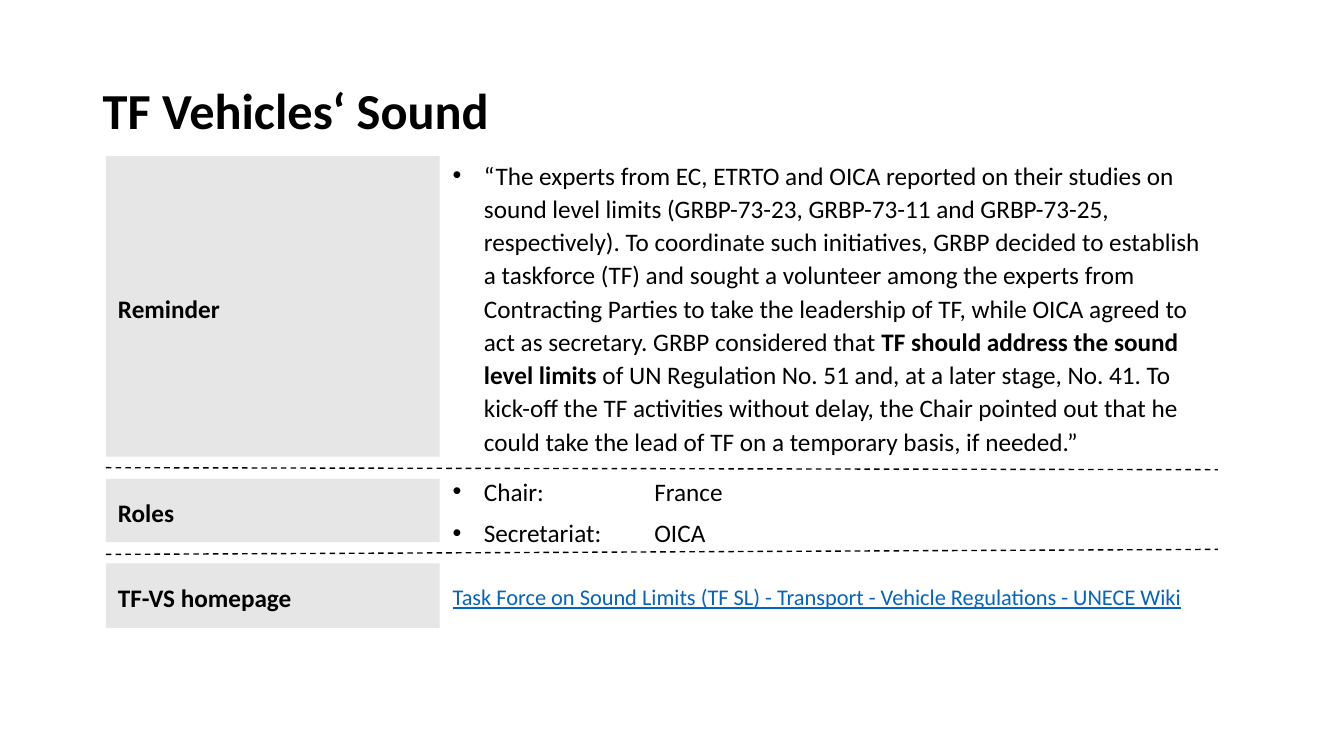
from lxml.etree import SubElement
from pptx import Presentation
from pptx.dml.color import RGBColor
from pptx.enum.dml import MSO_LINE
from pptx.enum.shapes import MSO_CONNECTOR as Connector, MSO_SHAPE as Shape
from pptx.enum.text import MSO_ANCHOR as Anchor
from pptx.oxml.ns import qn
from pptx.util import Inches, Pt

BLACK = RGBColor(0, 0, 0)
GREY = RGBColor(0xE7, 0xE6, 0xE6)
BLUE = RGBColor(0x05, 0x63, 0xC1)

BODY = {"name": "Calibri", "size": Pt(18), "bold": False, "color": BLACK}
STRONG = {**BODY, "bold": True}
TITLE = {**STRONG, "size": Pt(36)}
LINK = {**BODY, "size": Pt(16), "underline": True, "color": BLUE}

HEADING = [[("TF Vehicles‘ Sound", TITLE)]]
REMINDER = [[
    ("“The experts from EC, ETRTO and OICA reported on their studies on sound level limits "
     "(GRBP-73-23, GRBP-73-11 and GRBP-73-25, respectively). To coordinate such initiatives, "
     "GRBP decided to establish a taskforce (TF) and sought a volunteer among the experts from "
     "Contracting Parties to take the leadership of TF, while OICA agreed to act as secretary. "
     "GRBP considered that ", BODY),
    ("TF should address the sound level limits", STRONG),
    (" of UN Regulation No. 51 and, at a later stage, No. 41. To kick-off the TF activities "
     "without delay, the Chair pointed out that he could take the lead of TF on a temporary "
     "basis, if needed.”", BODY),
]]
ROLES = [[("Chair: \tFrance", BODY)], [("Secretariat: \tOICA", BODY)]]
HOMEPAGE = [[("Task Force on Sound Limits (TF SL) - Transport - Vehicle Regulations - UNECE Wiki",
              LINK)]]

ROWS = [
    ("Reminder", 1.55, 2.98, REMINDER, True, 0),
    ("Roles", 4.75, 0.63, ROLES, True, 0.04),
    ("TF-VS homepage", 5.59, 0.64, HOMEPAGE, False, 0),
]
DIVIDERS = [(4.64, 4.66), (5.5, 5.45)]
LABEL_LEFT, LABEL_WIDTH = 1.05, 3.31
TEXT_LEFT, TEXT_WIDTH = 4.49, 7.43
DIVIDER_RIGHT = 12.08
INDENT, TAB_STOP = Inches(0.31), Inches(2)


def add_bullet(para):
    props = para._p.get_or_add_pPr()
    props.set("marL", str(INDENT))
    props.set("indent", str(-INDENT))
    SubElement(props, qn("a:buFont"), typeface="Arial")
    SubElement(props, qn("a:buChar"), char="•")
    tabs = SubElement(props, qn("a:tabLst"))
    SubElement(tabs, qn("a:tab"), pos=str(TAB_STOP), algn="l")


def write(box, paragraphs, margins=(0, 0), bulleted=False, spacing=1.1):
    frame = box.text_frame
    side, edge = (Inches(margin) for margin in margins)
    layout = {"word_wrap": True, "vertical_anchor": Anchor.MIDDLE, "margin_left": side,
              "margin_right": side, "margin_top": edge, "margin_bottom": edge}
    for name, value in layout.items():
        setattr(frame, name, value)
    for index, spans in enumerate(paragraphs):
        para = frame.add_paragraph() if index else frame.paragraphs[0]
        if bulleted:
            add_bullet(para)
        para.line_spacing = spacing
        para.space_before = Pt(6 if index else 0)
        for text, style in spans:
            span = para.add_run()
            span.text = text
            for name, value in style.items():
                if name == "color":
                    span.font.color.rgb = value
                else:
                    setattr(span.font, name, value)


def add_text(page, place, paragraphs, **options):
    box = page.shapes.add_textbox(*map(Inches, place))
    write(box, paragraphs, **options)


def add_label(page, text, top, height):
    place = map(Inches, (LABEL_LEFT, top, LABEL_WIDTH, height))
    box = page.shapes.add_shape(Shape.RECTANGLE, *place)
    box.shadow.inherit = False
    box.fill.solid()
    box.fill.fore_color.rgb = GREY
    box.line.fill.background()
    write(box, [[(text, STRONG)]], margins=(0.12, 0.08))
    box.text_frame.paragraphs[0].alignment = 1


def add_divider(page, start, end):
    ends = map(Inches, (LABEL_LEFT, start, DIVIDER_RIGHT, end))
    divider = page.shapes.add_connector(Connector.STRAIGHT, *ends)
    divider.line.color.rgb = BLACK
    divider.line.width = Pt(1)
    divider.line.dash_style = MSO_LINE.DASH
    SubElement(divider._element.spPr, qn("a:effectLst"))


def main():
    deck = Presentation()
    deck.slide_width, deck.slide_height = Inches(13.33), Inches(7.5)
    page = deck.slides.add_slide(deck.slide_layouts[6])
    add_text(page, (0.92, 0.4, 11.5, 1.45), HEADING, margins=(0.1, 0.05), spacing=0.9)
    for start, end in DIVIDERS:
        add_divider(page, start, end)
    for label, top, height, paragraphs, bulleted, overhang in ROWS:
        add_label(page, label, top, height)
        place = (TEXT_LEFT, top - overhang, TEXT_WIDTH, height + 2 * overhang)
        add_text(page, place, paragraphs, bulleted=bulleted)
    deck.save("out.pptx")


if __name__ == "__main__":
    main()
